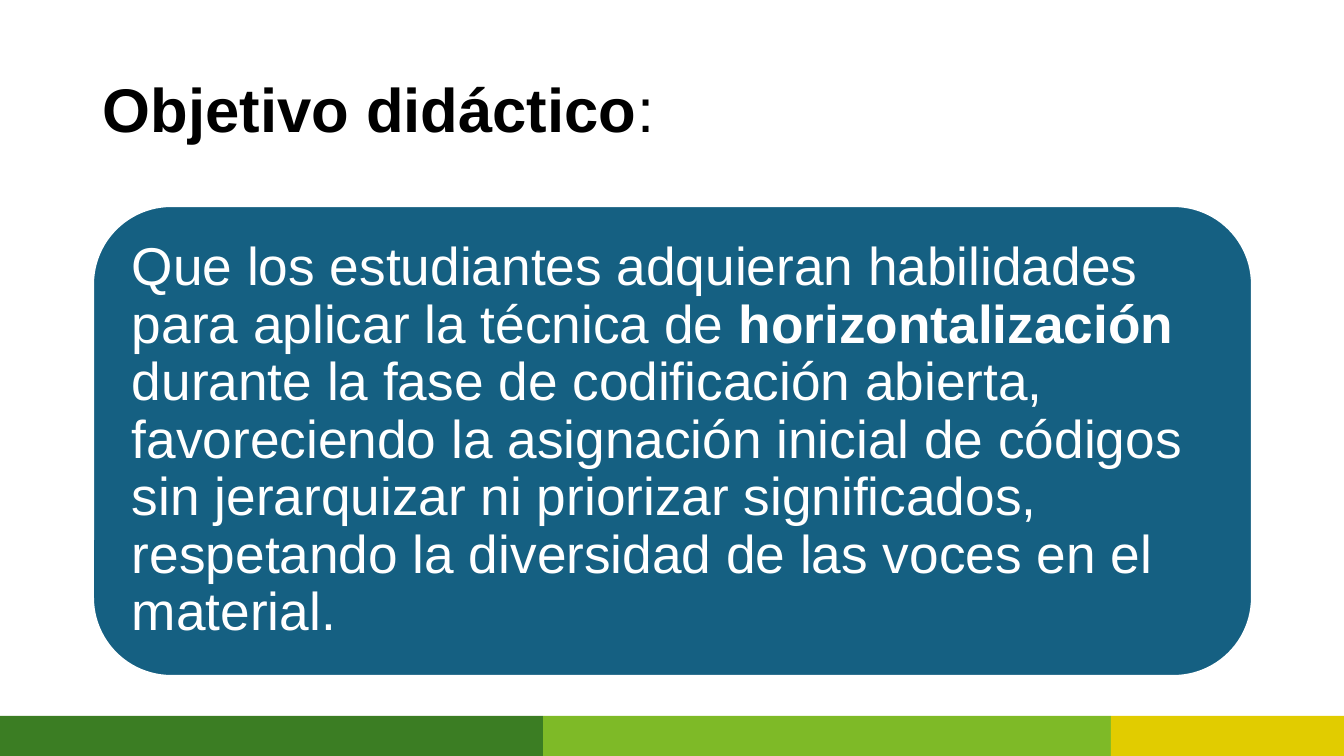
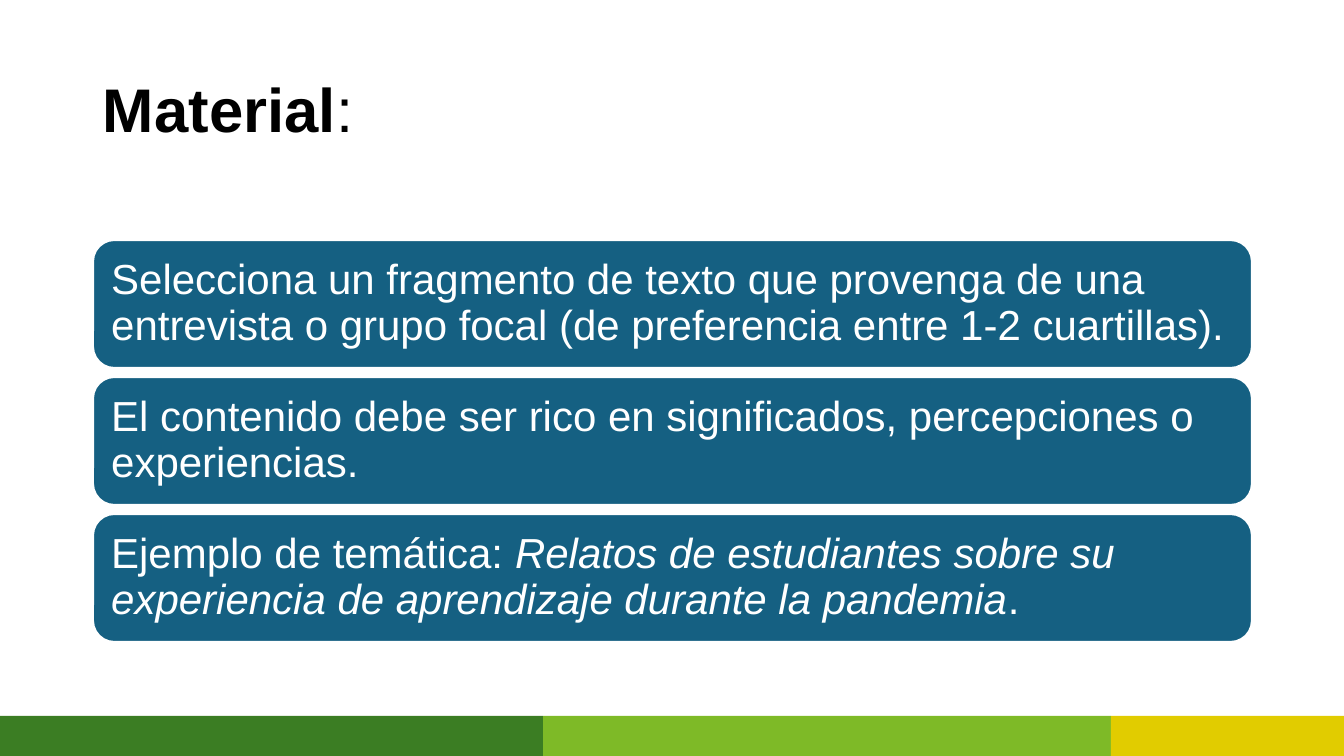
from dataclasses import dataclass

from pptx import Presentation
from pptx.dml.color import RGBColor
from pptx.enum.shapes import MSO_SHAPE as Shape
from pptx.enum.text import MSO_ANCHOR as Anchor, PP_ALIGN as Align
from pptx.util import Emu, Pt


@dataclass(frozen=True)
class Theme:
    """Colours, type sizes and measures shared by the slides."""
    font: str = "Arial"
    title_color: str = "000000"
    panel_color: str = "156082"
    panel_text: str = "FFFFFF"
    panel_line: str = "FFFFFF"
    title_size: int = 44
    objective_size: int = 38
    material_size: int = 30
    line_spacing: float = 0.9
    bands: tuple = ((0, "3B7D23"), (543, "7EBA27"), (1111, "E1CC00"))


THEME = Theme()
EMU_PER_PX = 914400 / 100.8
SLIDE_WIDTH, SLIDE_HEIGHT = 1344, 756
LEFT, WIDTH = 93, 1159
BAND_TOP = 716

OBJECTIVE = [
    ("Que los estudiantes adquieran habilidades para aplicar la técnica de ", ""),
    ("horizontalización", "b"),
    (" durante la fase de codificación abierta, favoreciendo la asignación inicial "
     "de códigos sin jerarquizar ni priorizar significados, respetando la diversidad "
     "de las voces en el material.", ""),
]
MATERIALS = [
    [("Selecciona un fragmento de texto que provenga de una entrevista o grupo focal "
      "(de preferencia entre 1-2 cuartillas).", "")],
    [("El contenido debe ser rico en significados, percepciones o experiencias.", "")],
    [("Ejemplo de temática: ", ""),
     ("Relatos de estudiantes sobre su experiencia de aprendizaje durante la pandemia", "i"),
     (".", "")],
]


def px(length):
    """Turn pixels into EMU."""
    return Emu(round(length * EMU_PER_PX))


def write_text(shape, runs, *, size, color, inset_x, inset_y):
    """Fill a shape with one left-aligned, middle-anchored paragraph of styled runs."""
    frame = shape.text_frame
    frame.word_wrap = True
    frame.vertical_anchor = Anchor.MIDDLE
    frame.margin_left = frame.margin_right = px(inset_x)
    frame.margin_top = frame.margin_bottom = px(inset_y)
    paragraph = frame.paragraphs[0]
    paragraph.alignment = Align.LEFT
    paragraph.line_spacing = THEME.line_spacing
    for text, style in runs:
        run = paragraph.add_run()
        run.text = text
        font = run.font
        font.name, font.size = THEME.font, Pt(size)
        font.color.rgb = RGBColor.from_string(color)
        font.bold, font.italic = "b" in style, "i" in style


def add_block(slide, kind, left, top, width, height, fill, line=None):
    """Add a flat filled shape, outlined when a line colour is given."""
    shape = slide.shapes.add_shape(kind, px(left), px(top), px(width), px(height))
    shape.shadow.inherit = False
    shape.fill.solid()
    shape.fill.fore_color.rgb = RGBColor.from_string(fill)
    if line:
        shape.line.color.rgb = RGBColor.from_string(line)
        shape.line.width = Pt(1.5)
    else:
        shape.line.fill.background()
    return shape


def add_panel(slide, top, height, runs, *, size, inset):
    """Add a rounded panel with its text."""
    panel = add_block(slide, Shape.ROUNDED_RECTANGLE, LEFT, top, WIDTH, height,
                      THEME.panel_color, THEME.panel_line)
    write_text(panel, runs, size=size, color=THEME.panel_text,
               inset_x=inset, inset_y=inset)


def add_footer(slide):
    """Add the coloured bands along the bottom edge."""
    ends = [left for left, _ in THEME.bands[1:]] + [SLIDE_WIDTH]
    for (left, color), right in zip(THEME.bands, ends):
        add_block(slide, Shape.RECTANGLE, left, BAND_TOP, right - left,
                  SLIDE_HEIGHT - BAND_TOP, color)


def add_titled_slide(presentation, title):
    """Add a blank-layout slide with the shared title style and footer."""
    slide = presentation.slides.add_slide(presentation.slide_layouts[6])
    box = slide.shapes.add_textbox(px(LEFT), px(40), px(WIDTH), px(146))
    write_text(box, [(title, "b"), (":", "")], size=THEME.title_size,
               color=THEME.title_color, inset_x=10, inset_y=5)
    add_footer(slide)
    return slide


def build_objective(presentation):
    """Build the slide with the teaching objective."""
    slide = add_titled_slide(presentation, "Objetivo didáctico")
    add_panel(slide, 206, 470, OBJECTIVE, size=THEME.objective_size, inset=16)


def build_material(presentation):
    """Build the slide with the stacked material panels."""
    slide = add_titled_slide(presentation, "Material")
    top, height, gap = 240, 128, 9
    for index, runs in enumerate(MATERIALS):
        add_panel(slide, top + index * (height + gap), height, runs,
                  size=THEME.material_size, inset=12)


def main():
    """Build and save the presentation."""
    presentation = Presentation()
    presentation.slide_width = px(SLIDE_WIDTH)
    presentation.slide_height = px(SLIDE_HEIGHT)
    build_objective(presentation)
    build_material(presentation)
    presentation.save("out.pptx")


if __name__ == "__main__":
    main()
